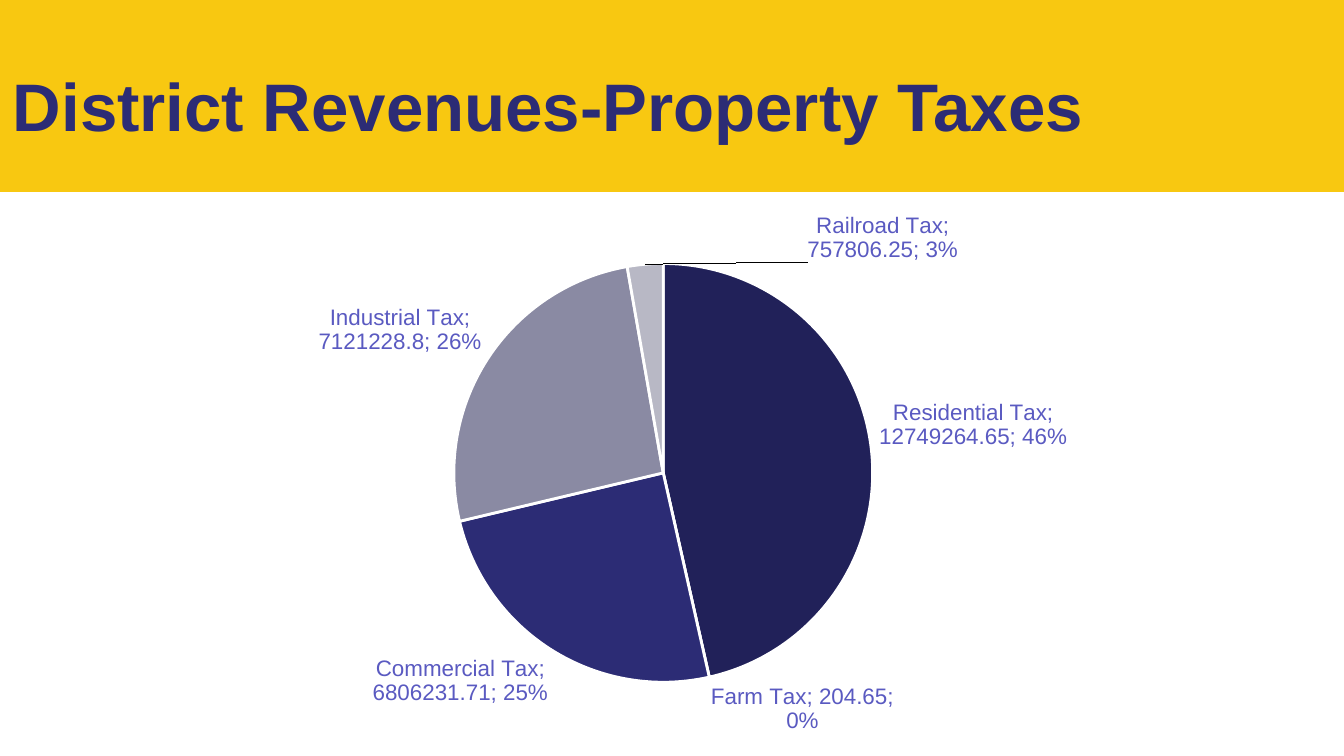
from lxml import etree
from pptx import Presentation
from pptx.chart.data import CategoryChartData
from pptx.dml.color import RGBColor
from pptx.enum.chart import XL_CHART_TYPE, XL_LABEL_POSITION
from pptx.enum.shapes import MSO_SHAPE
from pptx.enum.text import MSO_ANCHOR
from pptx.oxml import parse_xml
from pptx.oxml.ns import nsdecls, qn
from pptx.util import Emu, Pt

PX = 914400 / 134.4


def px(*nums):
    return [Emu(round(n * PX)) for n in nums]


def style(font, size, color, bold=False):
    font.name, font.size, font.bold = "Arial", Pt(size), bold
    font.color.rgb = RGBColor.from_string(color)


deck = Presentation()
deck.slide_width, deck.slide_height = px(1344, 756)
slide = deck.slides.add_slide(deck.slide_layouts[6])

# Yellow band
band = slide.shapes.add_shape(MSO_SHAPE.RECTANGLE, *px(0, 0, 1344, 191))
band.shadow.inherit = False
band.fill.solid()
band.fill.fore_color.rgb = RGBColor.from_string("F8C811")
band.line.color.rgb = RGBColor.from_string("F8C811")
band.line.width = Pt(0.75)

# Title
title = slide.shapes.add_textbox(*px(0, 44, 1142, 85))
frame = title.text_frame
frame.word_wrap = True
frame.vertical_anchor = MSO_ANCHOR.TOP
frame.margin_left, frame.margin_right, frame.margin_top, frame.margin_bottom = px(13, 13, 20, 0)
frame.text = "District Revenues-Property Taxes"
style(frame.paragraphs[0].runs[0].font, 36, "2C2C75", True)

# Pie of taxes: name, value, slice colour
taxes = [
    ("Residential Tax", 12749264.65, "212159"),
    ("Farm Tax", 204.65, "272768"),
    ("Commercial Tax", 6806231.71, "2C2C75"),
    ("Industrial Tax", 7121228.8, "8A8AA3"),
    ("Railroad Tax", 757806.25, "B8B8C5"),
]
data = CategoryChartData()
data.categories = [name for name, _, _ in taxes]
data.add_series("Series 1", [value for _, value, _ in taxes])
chart = slide.shapes.add_chart(XL_CHART_TYPE.PIE, *px(116, 190, 1084, 566), data).chart
chart.has_legend = False
chart.has_title = False
style(chart.font, 10, "2C2C75")
chart.plots[0].vary_by_categories = True
series = chart.plots[0].series[0]
for i, (_, _, color) in enumerate(taxes):
    part = series.points[i].format
    part.fill.solid()
    part.fill.fore_color.rgb = RGBColor.from_string(color)
    part.line.color.rgb = RGBColor.from_string("FFFFFF")
    part.line.width = Pt(1.5)

# Labels outside the slices
tags = series.data_labels
tags.show_value = tags.show_percentage = tags.show_category_name = True
tags.show_legend_key = False
tags.number_format, tags.number_format_is_linked = "General", False
tags.position = XL_LABEL_POSITION.OUTSIDE_END
style(tags.font, 12, "5A5AC1")

# The railroad label stands apart, to the right
rail = series.points[4].data_label
style(rail.font, 12, "5A5AC1")
rail.position = XL_LABEL_POSITION.OUTSIDE_END
tag = series._element.find(".//" + qn("c:dLbl"))
for key in ("c:showVal", "c:showCatName", "c:showPercent"):
    tag.find(qn(key)).set("val", "1")
shift = parse_xml(
    f'<c:layout {nsdecls("c")}><c:manualLayout>'
    '<c:x val="0.22"/><c:y val="0.01"/></c:manualLayout></c:layout>')
tag.find(qn("c:idx")).addnext(shift)

# Semicolons between label parts
for box in (tag, tag.getparent()):
    mark = etree.Element(qn("c:separator"))
    mark.text = "; "
    last = box.find(qn("c:showBubbleSize"))
    if last is None:
        last = box.find(qn("c:showPercent"))
    last.addnext(mark)

# Place of the pie inside the chart
area = chart._chartSpace.find(".//" + qn("c:plotArea"))
for old in area.findall(qn("c:layout")):
    area.remove(old)
area.insert(0, parse_xml(
    f'<c:layout {nsdecls("c")}><c:manualLayout><c:layoutTarget val="inner"/>'
    '<c:xMode val="edge"/><c:yMode val="edge"/><c:x val="0.31"/><c:y val="0.13"/>'
    '<c:w val="0.39"/><c:h val="0.74"/></c:manualLayout></c:layout>'))

deck.save("out.pptx")
